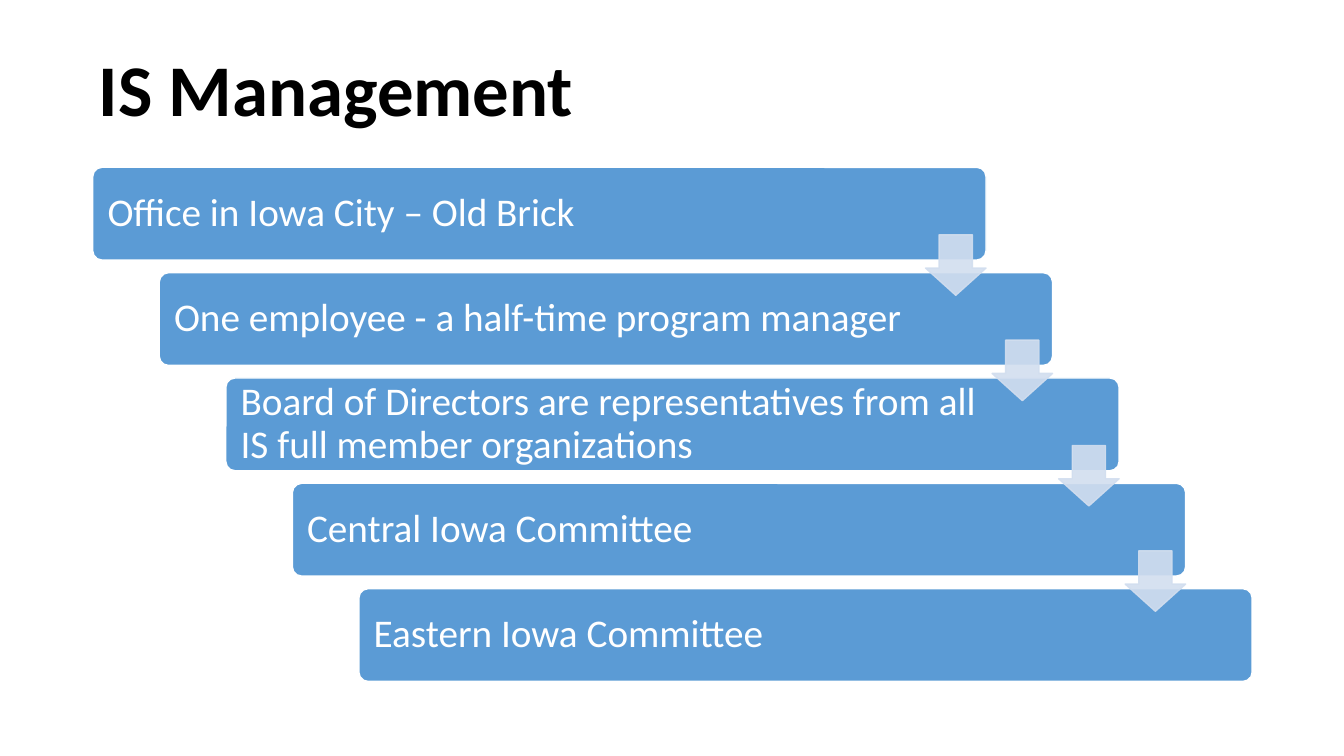
import pptx
import pptx.util
import pptx.dml.color
import pptx.enum.shapes
import pptx.enum.text
import pptx.oxml
import pptx.oxml.ns

Inches = pptx.util.Inches
Pt = pptx.util.Pt
RGBColor = pptx.dml.color.RGBColor
MSO_SHAPE = pptx.enum.shapes.MSO_SHAPE

# Content
TITLE = "IS Management"
STEPS = [
    "Office in Iowa City – Old Brick",
    "One employee - a half-time program manager",
    "Board of Directors are representatives from all IS full member organizations",
    "Central Iowa Committee",
    "Eastern Iowa Committee",
]

# Style
FONT = "Calibri"
BLACK = RGBColor(0x00, 0x00, 0x00)
WHITE = RGBColor(0xFF, 0xFF, 0xFF)
BLUE = RGBColor(0x5B, 0x9B, 0xD5)
PALE_BLUE = RGBColor(0xD2, 0xDE, 0xEF)
ARROW_OPACITY = 90

# Layout of the staircase, in inches
STEP_LEFT, STEP_TOP = 0.92, 1.66
STEP_WIDTH, STEP_HEIGHT = 8.86, 0.92
SHIFT_RIGHT, SHIFT_DOWN = 0.66, 1.045
ARROW_SIZE = 0.6
ARROW_DROP = 0.67
TEXT_INSET, ARROW_SPACE = 0.12, 1.38


def write_text(text_frame, text, size, color, bold=False):
    text_frame.word_wrap = True
    text_frame.auto_size = pptx.enum.text.MSO_AUTO_SIZE.NONE
    text_frame.vertical_anchor = pptx.enum.text.MSO_ANCHOR.MIDDLE
    paragraph = text_frame.paragraphs[0]
    paragraph.alignment = pptx.enum.text.PP_ALIGN.LEFT
    paragraph.line_spacing = 0.9
    run = paragraph.add_run()
    run.text = text
    run.font.name = FONT
    run.font.size = Pt(size)
    run.font.bold = bold
    run.font.color.rgb = color


def add_filled_shape(slide, kind, left, top, width, height, fill, line):
    shape = slide.shapes.add_shape(
        kind, Inches(left), Inches(top), Inches(width), Inches(height))
    shape.shadow.inherit = False
    shape.fill.solid()
    shape.fill.fore_color.rgb = fill
    shape.line.color.rgb = line
    shape.line.width = Pt(1)
    return shape


def add_step(slide, text, left, top):
    step = add_filled_shape(slide, MSO_SHAPE.ROUNDED_RECTANGLE, left, top,
                            STEP_WIDTH, STEP_HEIGHT, BLUE, WHITE)
    step.adjustments[0] = 0.1
    text_frame = step.text_frame
    text_frame.margin_left = Inches(TEXT_INSET)
    text_frame.margin_top = text_frame.margin_bottom = Inches(TEXT_INSET)
    text_frame.margin_right = Inches(ARROW_SPACE)
    write_text(text_frame, text, 28, WHITE)


def add_arrow(slide, left, top):
    arrow = add_filled_shape(slide, MSO_SHAPE.DOWN_ARROW, left, top,
                             ARROW_SIZE, ARROW_SIZE, PALE_BLUE, PALE_BLUE)
    # The first adjustment is the head length, the second the shaft width
    arrow.adjustments[0] = 0.55
    arrow.adjustments[1] = 0.45
    # Transparency of fill and line
    for color in arrow._element.spPr.iter(pptx.oxml.ns.qn("a:srgbClr")):
        alpha = pptx.oxml.parse_xml(
            f'<a:alpha {pptx.oxml.ns.nsdecls("a")} val="{ARROW_OPACITY * 1000}"/>')
        color.append(alpha)


def main():
    presentation = pptx.Presentation()
    presentation.slide_width = Inches(13.33)
    presentation.slide_height = Inches(7.5)
    slide = presentation.slides.add_slide(presentation.slide_layouts[5])

    # Title
    title = slide.shapes.title
    title.left, title.top = Inches(0.88), Inches(0.3)
    title.width, title.height = Inches(11.5), Inches(1.24)
    write_text(title.text_frame, TITLE, 52, BLACK, bold=True)

    # Steps, each one right of and below the last
    corners = [(STEP_LEFT + index * SHIFT_RIGHT, STEP_TOP + index * SHIFT_DOWN)
               for index in range(len(STEPS))]
    for text, (left, top) in zip(STEPS, corners):
        add_step(slide, text, left, top)

    # Arrows from each step to the next, flush with its right edge
    for left, top in corners[:-1]:
        add_arrow(slide, left + STEP_WIDTH - ARROW_SIZE, top + ARROW_DROP)

    presentation.save("out.pptx")


if __name__ == "__main__":
    main()
